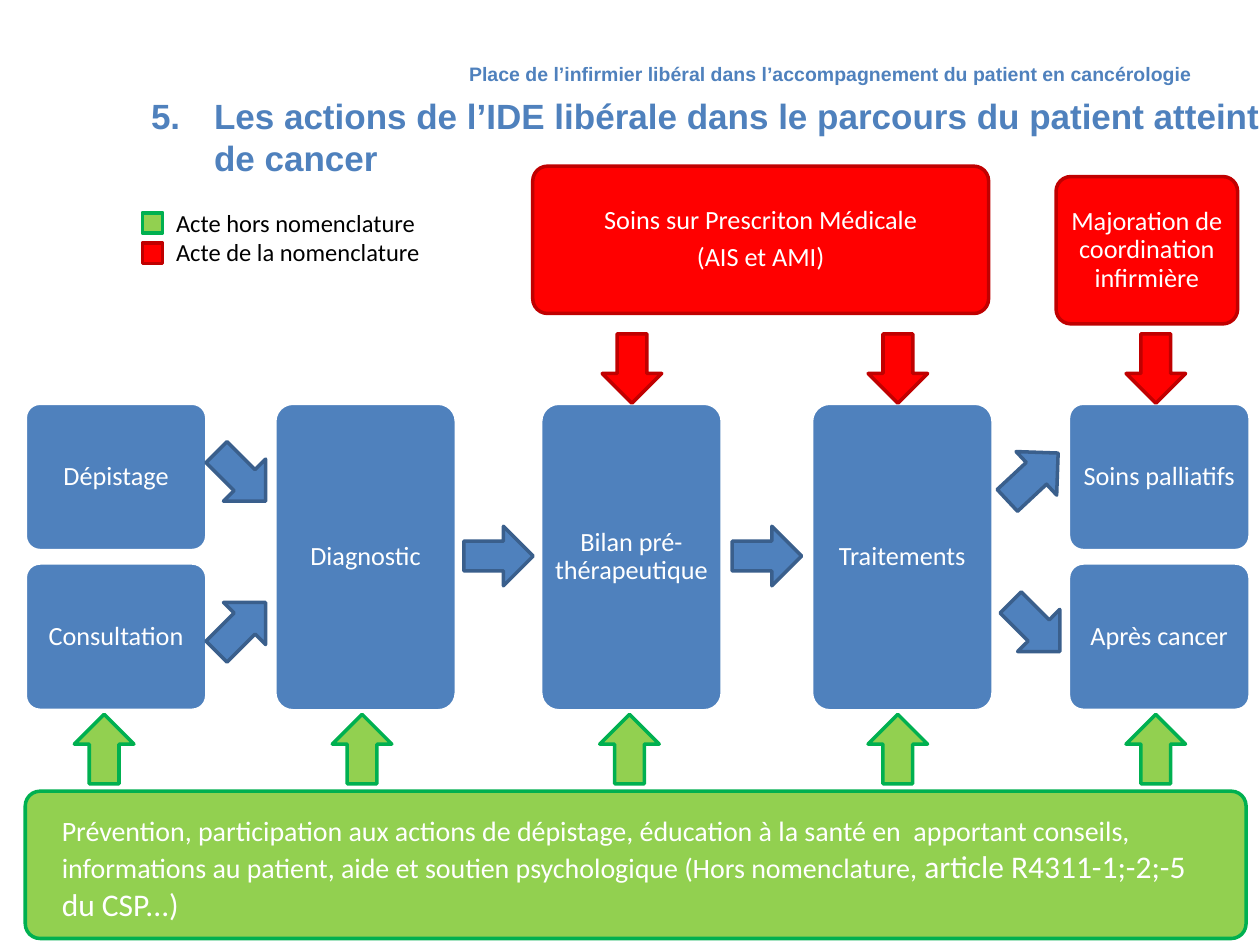
"""Builds the slide on the home nurse's actions along the cancer care pathway."""
from lxml import etree
from pptx import Presentation
from pptx import util as u
from pptx.dml import color
from pptx.enum import shapes, text
from pptx.oxml import ns

HEADER = "Place de l’infirmier libéral dans l’accompagnement du patient en cancérologie"
HEADING = "Les actions de l’IDE libérale dans le parcours du patient atteint de cancer"
PREVENTION = [
    ("Prévention, participation aux actions de dépistage, éducation à la santé en  apportant conseils, "
     "informations au patient, aide et soutien psychologique (Hors nomenclature, ", 16),
    ("article R4311-1;-2;-5 du CSP...)", 18),
]
STEP, UNLISTED, LISTED = ("4F81BD", "3A5F8C"), ("92D050", "00B050"), ("FF0000", "C00000")
BLUE, WHITE, BLACK = "4F81BD", "FFFFFF", "000000"

COLUMNS = [0.51, 5.54, 10.9, 16.36, 21.54]
STEP_WIDTH, STEP_HEIGHT, TALL_HEIGHT = 3.66, 2.97, 6.2
UPPER, LOWER = 8.13, 11.35
STEPS = [
    ("Dépistage", 0, UPPER, STEP_HEIGHT),
    ("Consultation", 0, LOWER, STEP_HEIGHT),
    ("Diagnostic", 1, UPPER, TALL_HEIGHT),
    ("Bilan pré-thérapeutique", 2, UPPER, TALL_HEIGHT),
    ("Traitements", 3, UPPER, TALL_HEIGHT),
    ("Soins palliatifs", 4, UPPER, STEP_HEIGHT),
    ("Après cancer", 4, LOWER, STEP_HEIGHT),
]
CARE = [
    (["Soins sur Prescriton Médicale", "(AIS et AMI)"], 10.74, 3.35, 9.19),
    (["Majoration de coordination infirmière"], 21.29, 3.56, 3.66),
]
ARROWS = [
    (STEP, [(4.86, 9.61, 45), (4.86, 12.64, 315), (10.05, 11.21, 0),
            (15.46, 11.21, 0), (20.82, 9.61, 317), (20.87, 12.64, 45)]),
    (LISTED, [(x, 7.43, 90) for x in (12.74, 18.1, 23.3)]),
    (UNLISTED, [(x, 15.1, 270) for x in (2.1, 7.3, 12.69, 18.1, 23.3)]),
]
LEGEND = [("Acte hors nomenclature", UNLISTED, 4.29), ("Acte de la nomenclature", LISTED, 4.9)]


def rgb(code):
    return color.RGBColor.from_string(code)


def place(part, *box):
    part.left, part.top, part.width, part.height = map(u.Cm, box)


def add_run(paragraph, words, size, code, font="Calibri", bold=False):
    run = paragraph.add_run()
    run.text = words
    run.font.name, run.font.size, run.font.bold = font, u.Pt(size), bold
    run.font.color.rgb = rgb(code)


def add_block(slide, kind, box, colours):
    block = slide.shapes.add_shape(kind, *map(u.Cm, box))
    block.shadow.inherit = False
    block.fill.solid()
    block.fill.fore_color.rgb = rgb(colours[0])
    block.line.color.rgb = rgb(colours[1])
    block.line.width = u.Pt(2)
    return block


def add_card(slide, box, colours, margins=(0.16, 0.16, 0.16, 0.16)):
    card = add_block(slide, shapes.MSO_SHAPE.ROUNDED_RECTANGLE, box, colours)
    card.adjustments[0] = 0.1
    frame = card.text_frame
    frame.word_wrap = True
    frame.vertical_anchor = text.MSO_ANCHOR.MIDDLE
    frame.margin_left, frame.margin_top, frame.margin_right, frame.margin_bottom = map(u.Cm, margins)
    return frame


def add_centred_card(slide, box, colours, lines):
    frame = add_card(slide, box, colours)
    for number, line in enumerate(lines):
        paragraph = frame.add_paragraph() if number else frame.paragraphs[0]
        paragraph.alignment = text.PP_ALIGN.CENTER
        paragraph.line_spacing = 0.9
        if number < len(lines) - 1:
            paragraph.space_after = u.Pt(5)
        add_run(paragraph, line, 15, WHITE)


def fill_placeholder(holder, box, words, size, anchor, alignment, bullet, indent=0, **options):
    place(holder, *box)
    frame = holder.text_frame
    frame.word_wrap = True
    frame.auto_size = text.MSO_AUTO_SIZE.NONE
    frame.vertical_anchor = anchor
    paragraph = frame.paragraphs[0]
    properties = paragraph._p.get_or_add_pPr()
    properties.set("marL", str(u.Cm(indent)))
    properties.set("indent", str(-u.Cm(indent)))
    etree.SubElement(properties, ns.qn(bullet), **options)
    paragraph.alignment = alignment
    paragraph.space_before = u.Pt(0)
    add_run(paragraph, words, size, BLUE, "Arial", True)


def main():
    deck = Presentation()
    deck.slide_width, deck.slide_height = u.Cm(25.4), u.Cm(19.05)
    slide = deck.slides.add_slide(deck.slide_layouts[1])
    heading, header = slide.placeholders

    fill_placeholder(header, (8.89, 1.12, 15.39, 0.81), HEADER, 11.1,
                     text.MSO_ANCHOR.TOP, text.PP_ALIGN.RIGHT, "a:buNone")
    fill_placeholder(heading, (2.79, 2.46, 23.7, 1.27), HEADING, 20, text.MSO_ANCHOR.BOTTOM,
                     text.PP_ALIGN.LEFT, "a:buAutoNum", 1.27, type="arabicPeriod", startAt="5")

    for label, column, top, height in STEPS:
        add_centred_card(slide, (COLUMNS[column], top, STEP_WIDTH, height), (BLUE, WHITE), [label])
    for lines, left, top, width in CARE:
        add_centred_card(slide, (left, top, width, STEP_HEIGHT), LISTED, lines)

    prevention = add_card(slide, (0.51, 15.95, 24.61, STEP_HEIGHT), UNLISTED, (0.65, 0.28, 0.68, 0.16))
    prevention.paragraphs[0].alignment = text.PP_ALIGN.LEFT
    for words, size in PREVENTION:
        add_run(prevention.paragraphs[0], words, size, WHITE)

    length, breadth = 1.4, 1.2
    for colours, spots in ARROWS:
        for x, y, angle in spots:
            box = (x - length / 2, y - breadth / 2, length, breadth)
            add_block(slide, shapes.MSO_SHAPE.RIGHT_ARROW, box, colours).rotation = angle

    legend = slide.shapes.add_textbox(*map(u.Cm, (3.3, 4.06, 5.46, 1.45))).text_frame
    legend.word_wrap = False
    for number, (label, colours, top) in enumerate(LEGEND):
        add_block(slide, shapes.MSO_SHAPE.RECTANGLE, (2.87, top, 0.41, 0.41), colours)
        paragraph = legend.add_paragraph() if number else legend.paragraphs[0]
        add_run(paragraph, label, 14, BLACK)

    deck.save("out.pptx")


if __name__ == "__main__":
    main()
